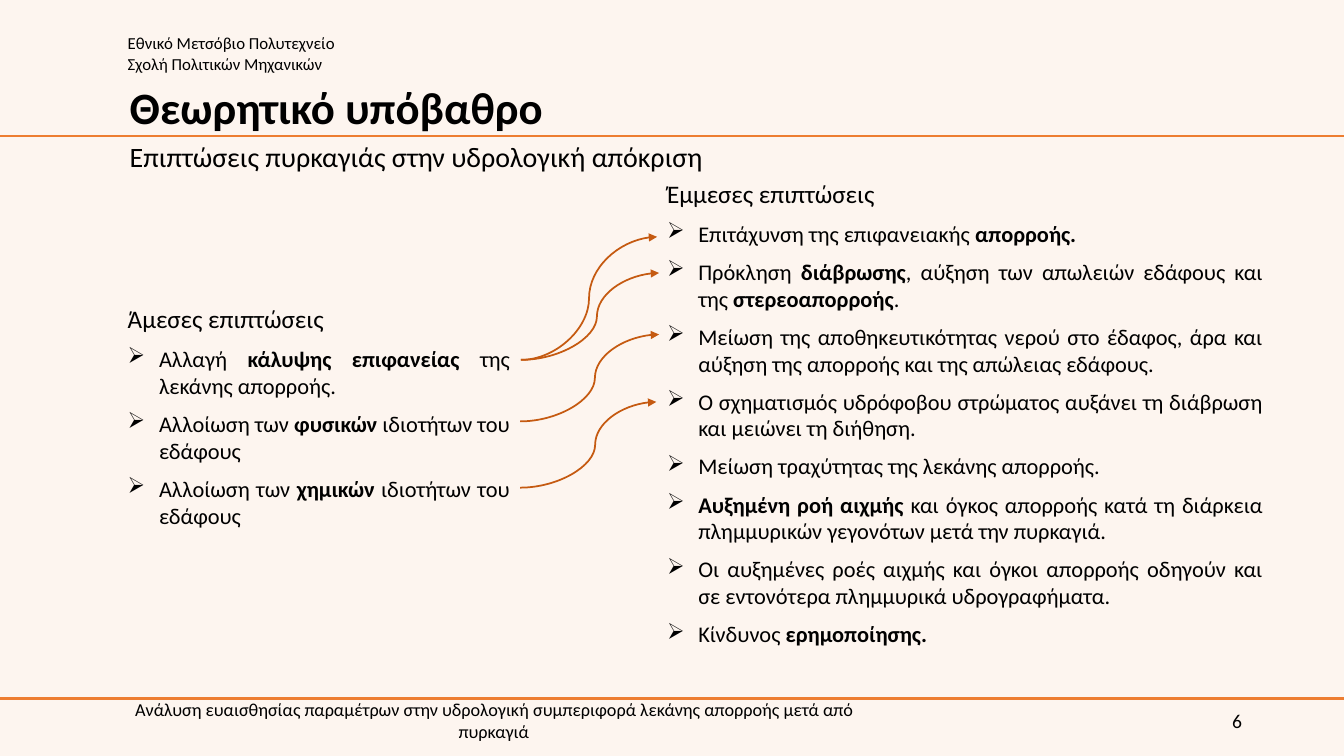
from typing import NamedTuple

from lxml import etree
from pptx import Presentation
from pptx import util as u
from pptx.dml import color
from pptx.enum import shapes, text
from pptx.oxml import ns

FONT = "Calibri"
INK, RULE, ARROW, PAPER = "000000", "ED7D31", "C55A11", "FDF5EF"
LEFT, RIGHT = text.PP_ALIGN.LEFT, text.PP_ALIGN.RIGHT
MID, FULL = text.PP_ALIGN.CENTER, text.PP_ALIGN.JUSTIFY
WIDTH, HEIGHT = 33.87, 19.05


class Para(NamedTuple):
    """A paragraph; words between asterisks are bold."""
    words: str
    size: float
    align: text.PP_ALIGN = LEFT
    after: float = 0
    lead: float = 1.0
    mark: str = ""
    bold: bool = False


class Box(NamedTuple):
    left: float
    top: float
    width: float
    height: float
    paras: list[Para]
    centred: bool = False


class Curve(NamedTuple):
    start: tuple[float, float]
    end: tuple[float, float]
    bend: int = 50000


def hue(code: str) -> color.RGBColor:
    return color.RGBColor.from_string(code)


def child(node, tag: str, **attrs: str):
    return etree.SubElement(node, ns.qn(tag), attrs)


def list_of(head: str, items: list[str], lead: float = 1.0) -> list[Para]:
    """A heading followed by its arrow-marked points."""
    points = [Para(item, 16, FULL, after=8, mark="➢") for item in items]
    return [Para(head, 18, after=8, lead=lead), *points]


def write(para, data: Para) -> None:
    para.alignment = data.align
    para.line_spacing = data.lead
    para.space_before = u.Pt(0)
    para.space_after = u.Pt(data.after)
    if data.mark:
        props = para._p.get_or_add_pPr()
        props.set("marL", str(u.Cm(0.79)))
        props.set("indent", str(-u.Cm(0.79)))
        child(props, "a:buChar", char=data.mark)
    para.font.name = FONT
    para.font.size = u.Pt(data.size)
    para.font.color.rgb = hue(INK)
    if data.bold:
        para.font.bold = True
    for i, part in enumerate(data.words.split("*")):
        if part:
            run = para.add_run()
            run.text = part
            if i % 2:
                run.font.bold = True


def add_box(slide, box: Box) -> None:
    shape = slide.shapes.add_textbox(*map(u.Cm, box[:4]))
    frame = shape.text_frame
    frame.word_wrap = True
    if box.centred:
        frame.vertical_anchor = text.MSO_ANCHOR.MIDDLE
    else:
        frame.auto_size = text.MSO_AUTO_SIZE.SHAPE_TO_FIT_TEXT
    for i, data in enumerate(box.paras):
        write(frame.add_paragraph() if i else frame.paragraphs[0], data)


def add_line(slide, kind, start, end, code: str, width: float):
    line = slide.shapes.add_connector(kind, *map(u.Cm, (*start, *end)))
    line.line.color.rgb = hue(code)
    line.line.width = u.Pt(width)
    child(line._element.spPr, "a:effectLst")
    return line


def add_curve(slide, curve: Curve) -> None:
    line = add_line(slide, shapes.MSO_CONNECTOR.CURVE, curve.start, curve.end,
                    ARROW, 1.25)
    child(line.line._get_or_add_ln(), "a:tailEnd", type="triangle")
    guides = line._element.spPr.find(".//" + ns.qn("a:avLst"))
    child(guides, "a:gd", name="adj1", fmla=f"val {curve.bend}")


DIRECT = list_of("Άμεσες επιπτώσεις", [
    "Αλλαγή *κάλυψης επιφανείας* της λεκάνης απορροής.",
    "Αλλοίωση των *φυσικών* ιδιοτήτων του εδάφους",
    "Αλλοίωση των *χημικών* ιδιοτήτων του εδάφους",
], lead=1.07)

KNOCK_ON = list_of("Έμμεσες επιπτώσεις", [
    "Επιτάχυνση της επιφανειακής *απορροής.*",
    "Πρόκληση *διάβρωσης*, αύξηση των απωλειών εδάφους και της *στερεοαπορροής*.",
    "Mείωση της αποθηκευτικότητας νερού στο έδαφος, άρα και αύξηση της "
    "απορροής και της απώλειας εδάφους.",
    "Ο σχηματισμός υδρόφοβου στρώματος αυξάνει τη διάβρωση και μειώνει τη διήθηση.",
    "Μείωση τραχύτητας της λεκάνης απορροής.",
    "*Αυξημένη ροή αιχμής* και όγκος απορροής κατά τη διάρκεια πλημμυρικών "
    "γεγονότων μετά την πυρκαγιά.",
    "Οι αυξημένες ροές αιχμής και όγκοι απορροής οδηγούν και σε εντονότερα "
    "πλημμυρικά υδρογραφήματα.",
    "Κίνδυνος *ερημοποίησης.*",
])

BOXES = [
    Box(2.97, 0.71, 10.97, 1.27, [Para("Εθνικό Μετσόβιο Πολυτεχνείο", 12),
                                  Para("Σχολή Πολιτικών Μηχανικών", 12)]),
    Box(23.93, 17.65, 7.62, 1.02, [Para("6", 14, RIGHT)], centred=True),
    Box(2.97, 7.47, 10.13, 6.05, DIRECT),
    Box(16.56, 4.37, 15.52, 12.19, KNOCK_ON),
    Box(3.02, 1.55, 11.56, 2.44,
        [Para("Θεωρητικό υπόβαθρο", 32, lead=0.9, bold=True)], centred=True),
    Box(3.02, 3.4, 17.83, 1.96,
        [Para("Επιπτώσεις πυρκαγιάς στην υδρολογική απόκριση", 20)]),
    Box(2.26, 17.65, 20.37, 1.02,
        [Para("Ανάλυση ευαισθησίας παραμέτρων στην υδρολογική συμπεριφορά "
              "λεκάνης απορροής μετά από πυρκαγιά", 13, MID)], centred=True),
]

CURVES = [
    Curve((13.13, 9.07), (16.61, 6.88), 55000),
    Curve((13.11, 10.62), (16.61, 8.43), 53800),
    Curve((13.11, 12.29), (16.54, 10.13), 55100),
    Curve((13.13, 9.07), (16.56, 5.97)),
]


def main() -> None:
    deck = Presentation()
    deck.slide_width, deck.slide_height = u.Cm(WIDTH), u.Cm(HEIGHT)
    slide = deck.slides.add_slide(deck.slide_layouts[6])
    fill = slide.background.fill
    fill.solid()
    fill.fore_color.rgb = hue(PAPER)
    for y in (17.6, 3.43):
        add_line(slide, shapes.MSO_CONNECTOR.STRAIGHT, (0, y), (WIDTH, y), RULE, 1.5)
    for box in BOXES:
        add_box(slide, box)
    for curve in CURVES:
        add_curve(slide, curve)
    deck.save("out.pptx")


if __name__ == "__main__":
    main()
